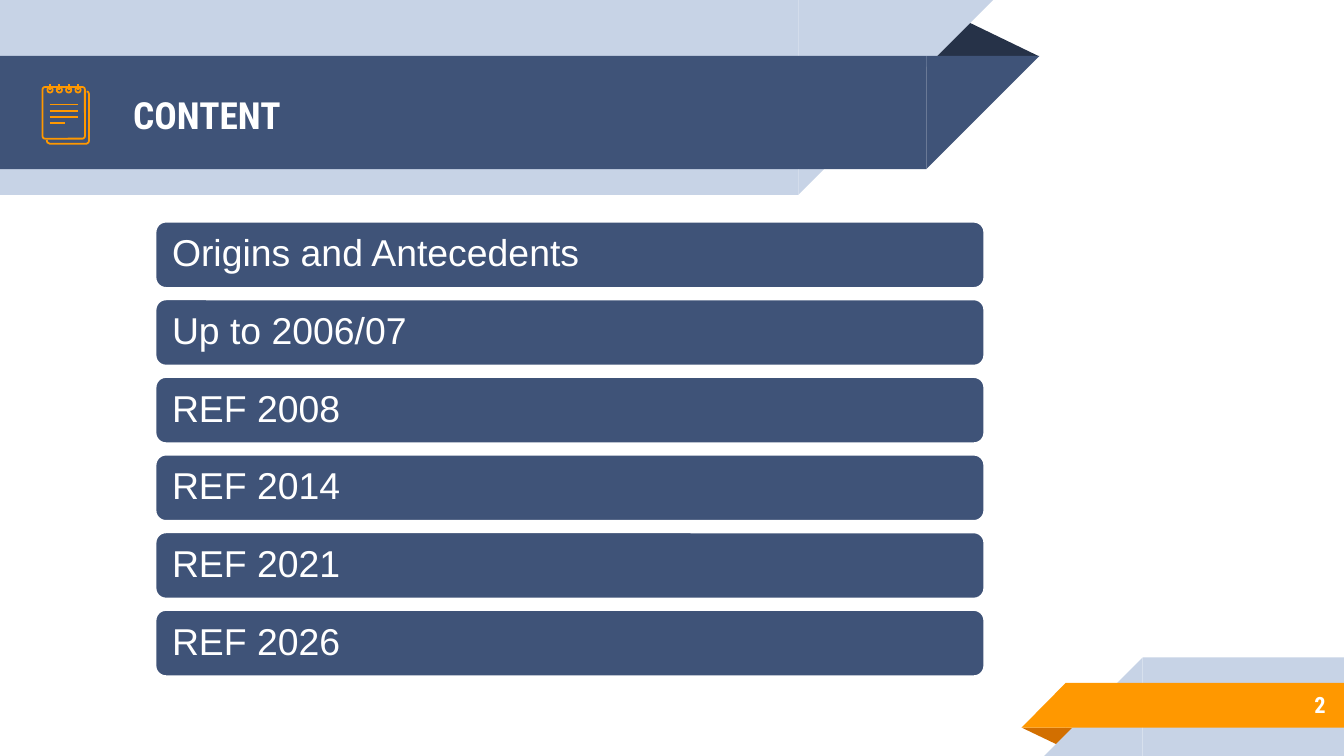
from pptx import Presentation
from pptx.dml.color import RGBColor
from pptx.enum.shapes import MSO_CONNECTOR, MSO_SHAPE as SHAPE
from pptx.enum.text import MSO_ANCHOR, PP_ALIGN
from pptx.oxml.ns import qn
from pptx.util import Pt
from lxml import etree

NAVY, PALE, ORANGE, WHITE = "3F5378", "C7D3E6", "FF9800", "FFFFFF"


def rgb(color):
    return RGBColor.from_string(color)


def style(sp, fill=None, line=None, width=0.96):
    """Set fill and outline, either of which may be absent, and drop the shadow."""
    sp.shadow.inherit = False
    if fill:
        sp.fill.solid()
        sp.fill.fore_color.rgb = rgb(fill)
    else:
        sp.fill.background()
    if line:
        sp.line.color.rgb = rgb(line)
        sp.line.width = Pt(width)
    else:
        sp.line.fill.background()


prs = Presentation()
prs.slide_width, prs.slide_height = Pt(720), Pt(405)
s = prs.slides.add_slide(prs.slide_layouts[5])
shapes = s.shapes

# Header and footer ribbons
RECT, CORNER, FOLD = SHAPE.RECTANGLE, SHAPE.RIGHT_TRIANGLE, SHAPE.ISOSCELES_TRIANGLE
ribbons = [
    (FOLD, 495.5, 10.2, 61.2, 20, "263248", None),
    (RECT, 0, 0, 427.7, 104.4, PALE, None),
    (CORNER, 427.7, 0, 104.4, 104.4, PALE, "flipV"),
    (RECT, 0, 30, 496.3, 60.6, NAVY, None),
    (CORNER, 496.3, 30, 60.6, 60.6, NAVY, "flipV"),
    (FOLD, 547.3, 389.8, 30.9, 10, "D26F00", "rotate"),
    (RECT, 612.2, 352.2, 107.8, 52.8, PALE, None),
    (CORNER, 559.4, 352.2, 52.8, 52.8, PALE, "flipH"),
    (RECT, 571, 365.8, 149, 24, ORANGE, None),
    (CORNER, 547.3, 365.8, 23.7, 24, ORANGE, "flipH"),
]
for kind, x, y, w, h, color, turn in ribbons:
    sp = shapes.add_shape(kind, Pt(x), Pt(y), Pt(w), Pt(h))
    style(sp, color)
    if kind == FOLD:
        sp.adjustments[0] = 0.324
    if turn == "rotate":
        sp.rotation = 180
    elif turn:
        sp.element.spPr.find(qn("a:xfrm")).set(turn, "1")

# Title, brought in front of the ribbons
title = shapes.title
shapes._spTree.append(title.element)
title.left, title.top, title.width, title.height = Pt(64.1), Pt(31), Pt(432.7), Pt(60.5)
title.text = "CONTENT"
number = shapes.add_textbox(Pt(599.8), Pt(365), Pt(117.4), Pt(25.2))
number.text = "2"
for sp, size, align in ((title, 20, PP_ALIGN.LEFT), (number, 12, PP_ALIGN.RIGHT)):
    tf = sp.text_frame
    tf.word_wrap = True
    tf.vertical_anchor = MSO_ANCHOR.MIDDLE
    tf.margin_left = tf.margin_right = tf.margin_top = tf.margin_bottom = Pt(7.2)
    p = tf.paragraphs[0]
    p.alignment = align
    p.font.name, p.font.size, p.font.bold = "Roboto Condensed", Pt(size), True
    p.font.color.rgb = rgb(WHITE)

# Notepad icon: back page, front page, rings, then ring pins and writing lines
edge = [(25.4, 76.4), (26.6, 77), (46.4, 77), (47.4, 76.4),
        (47.7, 75.4), (47.7, 50.4), (47.3, 49.3), (46.4, 49)]
builder = shapes.build_freeform(Pt(25), Pt(75))
builder.add_line_segments([(Pt(x), Pt(y)) for x, y in edge], close=False)
style(builder.convert_to_shape(), line=ORANGE)

page = shapes.add_shape(SHAPE.ROUNDED_RECTANGLE, Pt(22.8), Pt(46.6), Pt(22.7), Pt(27.7))
page.adjustments[0] = 0.06
style(page, line=ORANGE)

ring_xs = [26.8 + 5 * i for i in range(4)]
for x in ring_xs:
    ring = shapes.add_shape(SHAPE.OVAL, Pt(x - 1.4), Pt(46.8), Pt(2.8), Pt(2.8))
    style(ring, line=ORANGE)

strokes = [(x, 45.2, x, 48.2) for x in ring_xs]
strokes += [(26.6, 56 + 3.3 * i, right, 56 + 3.3 * i)
            for i, right in enumerate((41.9, 41.9, 41.9, 34.6))]
for stroke in strokes:
    line = shapes.add_connector(MSO_CONNECTOR.STRAIGHT, *(Pt(v) for v in stroke))
    line.line.color.rgb = rgb(ORANGE)
    line.line.width = Pt(0.96)
    etree.SubElement(line.element.spPr, qn("a:effectLst"))

# Agenda
topics = ["Origins and Antecedents", "Up to 2006/07", "REF 2008",
          "REF 2014", "REF 2021", "REF 2026"]
for i, topic in enumerate(topics):
    box = shapes.add_shape(SHAPE.ROUNDED_RECTANGLE,
                           Pt(82.8), Pt(118.3 + 41.6 * i), Pt(445), Pt(36.5))
    style(box, NAVY, WHITE, 2)
    tf = box.text_frame
    tf.word_wrap = True
    tf.vertical_anchor = MSO_ANCHOR.MIDDLE
    tf.margin_left = tf.margin_right = Pt(7.6)
    p = tf.paragraphs[0]
    p.text = topic
    p.alignment = PP_ALIGN.LEFT
    p.line_spacing = 0.9
    p.font.name, p.font.size = "Arial", Pt(20)
    p.font.color.rgb = rgb(WHITE)

prs.save("out.pptx")
